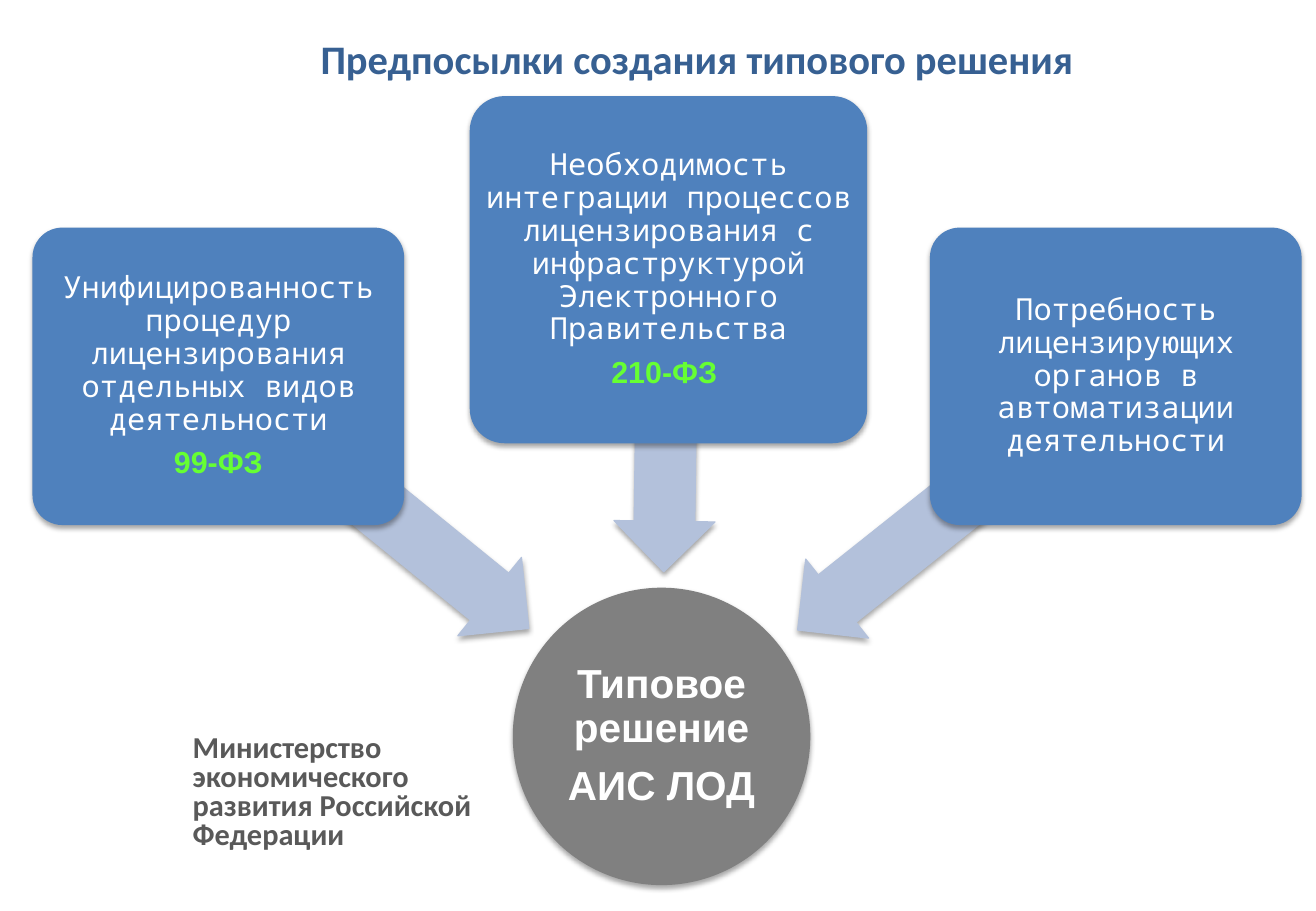
from dataclasses import dataclass

import lxml.etree
import pptx
import pptx.dml.color
import pptx.enum.shapes
import pptx.enum.text
import pptx.oxml.ns
import pptx.util

Cm = pptx.util.Cm
Pt = pptx.util.Pt
Shapes = pptx.enum.shapes.MSO_SHAPE
Align = pptx.enum.text.PP_ALIGN
Anchor = pptx.enum.text.MSO_ANCHOR
qn = pptx.oxml.ns.qn

BLUE, GREY, PALE, WHITE, GREEN = "4F81BD", "808080", "B3C1DB", "FFFFFF", "66FF33"


@dataclass
class Area:
    left: float
    top: float
    width: float
    height: float

    def lengths(self) -> list:
        return [Cm(v) for v in (self.left, self.top, self.width, self.height)]


@dataclass
class Line:
    text: str
    font: str
    size: float
    color: str
    bold: bool = True
    after: float = 0


@dataclass
class Reason:
    area: Area
    arrow: Area
    rotation: float
    text: str
    law: str = ""


def rgb(value: str) -> pptx.dml.color.RGBColor:
    return pptx.dml.color.RGBColor.from_string(value)


def write(shape, lines: list[Line], align, anchor, spacing: float = 1.0) -> None:
    frame = shape.text_frame
    frame.word_wrap = True
    frame.vertical_anchor = anchor
    for index, line in enumerate(lines):
        para = frame.add_paragraph() if index else frame.paragraphs[0]
        para.alignment = align
        para.line_spacing = spacing
        para.space_after = Pt(line.after)
        span = para.add_run()
        span.text = line.text
        span.font.name = line.font
        span.font.size = Pt(line.size)
        span.font.bold = line.bold
        span.font.color.rgb = rgb(line.color)


def add_shadow(shape) -> None:
    shape.shadow.inherit = False
    effects = shape.fill._xPr.find(qn("a:effectLst"))
    outer = lxml.etree.SubElement(
        effects, qn("a:outerShdw"), blurRad=str(Pt(3.1)), dist=str(Pt(1.8)),
        dir="5400000", rotWithShape="0")
    color = lxml.etree.SubElement(outer, qn("a:srgbClr"), val="000000")
    lxml.etree.SubElement(color, qn("a:alpha"), val="35000")


def add_shape(page, kind, area: Area, fill: str, *adjustments: float):
    shape = page.shapes.add_shape(kind, *area.lengths())
    for index, value in enumerate(adjustments):
        shape.adjustments[index] = value
    shape.fill.solid()
    shape.fill.fore_color.rgb = rgb(fill)
    shape.line.fill.background()
    add_shadow(shape)
    return shape


def fill_shape(shape, lines: list[Line], inset: float) -> None:
    frame = shape.text_frame
    frame.margin_left = frame.margin_right = Cm(inset)
    frame.margin_top = frame.margin_bottom = Cm(inset)
    write(shape, lines, Align.CENTER, Anchor.MIDDLE, 0.9)


def add_reason(page, reason: Reason) -> None:
    arrow = add_shape(page, Shapes.LEFT_ARROW, reason.arrow, PALE, 0.6, 0.5)
    arrow.rotation = reason.rotation
    arrow.line.color.rgb = rgb(PALE)
    arrow.line.width = Pt(0.75)

    box = add_shape(page, Shapes.ROUNDED_RECTANGLE, reason.area, BLUE, 0.1)
    lines = [Line(reason.text, "Noto Sans Mono", 18, WHITE, False, 6.3)]
    if reason.law:
        lines.append(Line(reason.law, "Arial", 18, GREEN, after=6.3))
    fill_shape(box, lines, 0.08)


REASONS = [
    Reason(Area(0.68, 4.76, 7.77, 6.22), Area(3.63, 9.45, 8.36, 2.11), 219.1,
           "Унифицированность процедур лицензирования отдельных видов деятельности",
           "99-ФЗ"),
    Reason(Area(9.82, 2.01, 8.31, 7.26), Area(10.77, 7.75, 6.3, 2.11), 270.8,
           "Необходимость интеграции процессов лицензирования с инфраструктурой "
           "Электронного Правительства", "210-ФЗ "),
    Reason(Area(19.44, 4.76, 7.77, 6.22), Area(15.75, 9.47, 8.51, 2.11), 321.5,
           "Потребность лицензирующих органов в автоматизации деятельности"),
]


def main() -> None:
    deck = pptx.Presentation()
    deck.slide_width, deck.slide_height = Cm(27.51), Cm(19.05)
    page = deck.slides.add_slide(deck.slide_layouts[6])

    # Title
    title = page.shapes.add_textbox(*Area(2.77, -0.28, 23.6, 3).lengths())
    write(title, [Line("Предпосылки создания типового решения", "Calibri", 24, "376092")],
          Align.CENTER, Anchor.MIDDLE)

    # Resulting solution
    solution = add_shape(page, Shapes.OVAL, Area(10.72, 12.29, 6.22, 6.22), GREY)
    fill_shape(solution, [Line(text, "Arial", 24, WHITE, after=8.4)
                          for text in ("Типовое решение", "АИС ЛОД")], 0.05)

    # Reasons with arrows to the solution
    for reason in REASONS:
        add_reason(page, reason)

    # Ministry
    ministry = page.shapes.add_textbox(*Area(3.78, 15.24, 6.81, 2.67).lengths())
    write(ministry, [Line("Министерство экономического развития Российской Федерации",
                          "Calibri", 18, "595959")], Align.LEFT, Anchor.TOP, 0.8)

    deck.save("out.pptx")


if __name__ == "__main__":
    main()
